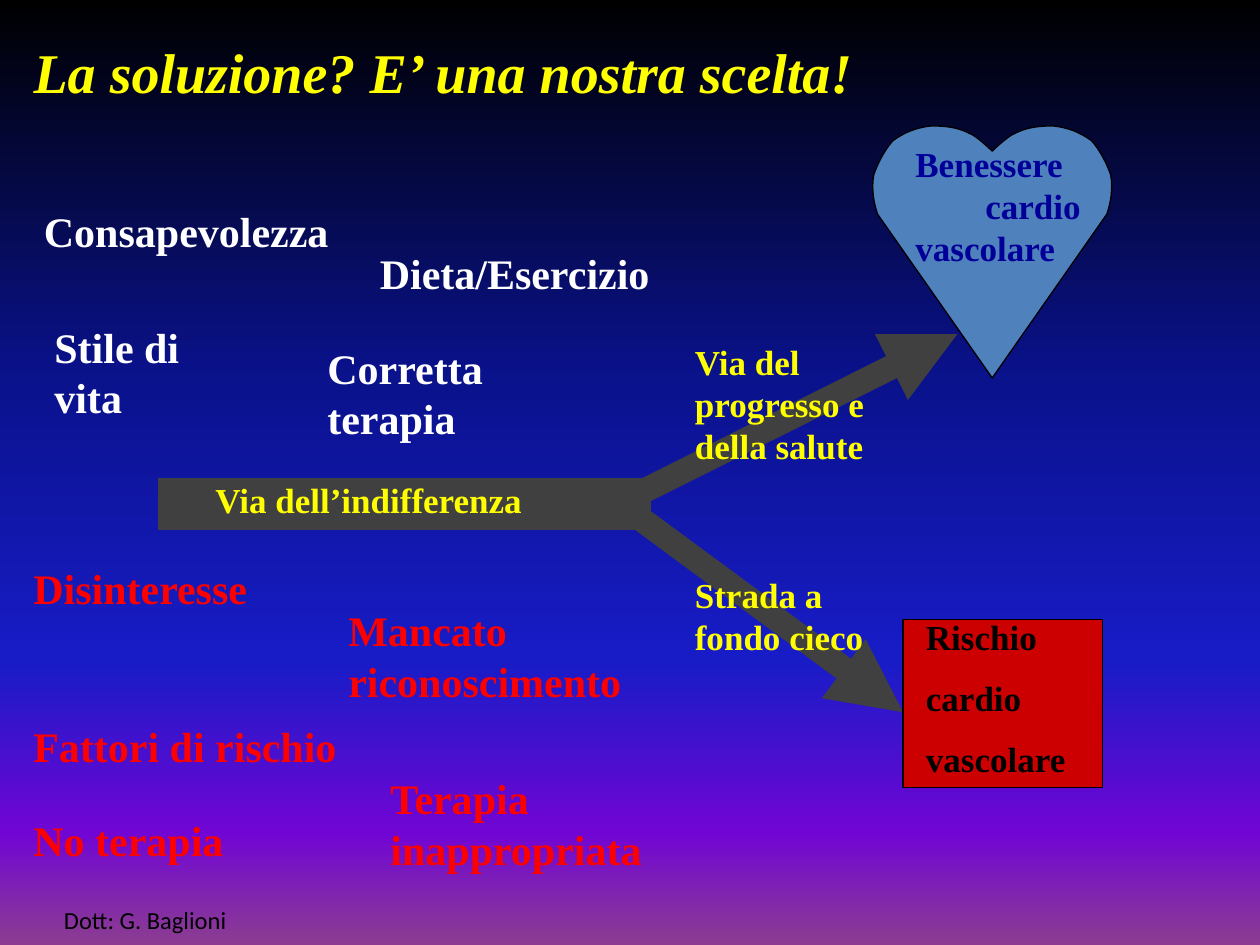
from lxml import etree
from pptx import Presentation
from pptx.dml.color import RGBColor
from pptx.enum.shapes import MSO_CONNECTOR, MSO_SHAPE
from pptx.enum.text import MSO_ANCHOR, MSO_AUTO_SIZE, PP_ALIGN
from pptx.oxml.ns import qn
from pptx.util import Pt

STRAIGHT = MSO_CONNECTOR.STRAIGHT
RECTANGLE = MSO_SHAPE.RECTANGLE
TOP, MIDDLE = MSO_ANCHOR.TOP, MSO_ANCHOR.MIDDLE
LEFT, CENTER = PP_ALIGN.LEFT, PP_ALIGN.CENTER
GROW = MSO_AUTO_SIZE.SHAPE_TO_FIT_TEXT
TITLE_ONLY = 5

SERIF, SANS = "Times New Roman", "Calibri"
YELLOW, WHITE, RED, BLACK = "FFFF00", "FFFFFF", "FF0000", "000000"
ROAD, NAVY, HEART_BLUE, RISK_RED = "404040", "000099", "4F81BD", "CC0000"
NIGHT_SKY = [(0, BLACK), (40, "0A128C"), (70, "181CC7"), (88, "7005D4"), (100, "8C3D91")]

# Left lobe of the heart, from notch to side: offsets from the top centre
LOBE_START = (0, 14.4)
LOBE_CURVES = [
    ((-3, 11.5), (-8.6, 6.5), (-11.5, 5)),
    ((-19.4, 0.7), (-26.6, 0), (-34.6, 0)),
    ((-42.5, 0.7), (-50.4, 3.6), (-56.9, 8.6)),
    ((-61.9, 14.4), (-65.5, 21.6), (-67.7, 28)),
    ((-69.1, 36), (-67.7, 43.9), (-65.5, 50.4)),
]
HEART_TIP = (0, 144)


def color(hex_string):
    return RGBColor.from_string(hex_string)


def curve_points(start, curves, steps=8):
    """Sample a chain of cubic Bezier curves."""
    points = [start]
    for c1, c2, end in curves:
        for step in range(1, steps + 1):
            t = step / steps
            u = 1 - t
            points.append(tuple(
                u**3 * a + 3 * u * u * t * b + 3 * u * t * t * c + t**3 * d
                for a, b, c, d in zip(start, c1, c2, end)))
        start = end
    return points


class SlideBuilder:
    font = SERIF
    outline = 0.75

    def __init__(self, slide):
        self.slide = slide

    def background(self, stops):
        fill = self.slide.background.fill
        fill.gradient()
        fill.gradient_angle = 270
        stop_list = next(self.slide.element.iter(qn("a:gsLst")))
        for old_stop in list(stop_list):
            stop_list.remove(old_stop)
        for percent, hex_string in stops:
            stop = etree.SubElement(stop_list, qn("a:gs"), pos=str(percent * 1000))
            etree.SubElement(stop, qn("a:srgbClr"), val=hex_string)

    def fill_text(self, box, lines, size, hex_string, bold=True, italic=False,
                  font=None, align=LEFT, anchor=TOP, gap=0, indents=()):
        frame = box.text_frame
        frame.word_wrap = True
        frame.auto_size = GROW
        frame.vertical_anchor = anchor
        for number, line in enumerate(lines):
            paragraph = frame.add_paragraph() if number else frame.paragraphs[0]
            paragraph.alignment = align
            paragraph.space_before = Pt(gap if number else 0)
            if number < len(indents):
                properties = paragraph._p.get_or_add_pPr()
                properties.set("marL", str(Pt(indents[number])))
            run = paragraph.add_run()
            run.text = line
            run.font.name = font or self.font
            run.font.size = Pt(size)
            run.font.bold = bold
            run.font.italic = italic
            run.font.color.rgb = color(hex_string)

    def title(self, line, x, y, w, h):
        title = self.slide.shapes.title
        title.left, title.top, title.width, title.height = map(Pt, (x, y, w, h))
        self.fill_text(title, [line], 32, YELLOW, italic=True)

    def text(self, lines, x, y, w, h, size, hex_string, **style):
        box = self.slide.shapes.add_textbox(*map(Pt, (x, y, w, h)))
        self.fill_text(box, lines, size, hex_string, **style)

    def paint(self, shape, fill):
        shape.shadow.inherit = False
        shape.fill.solid()
        shape.fill.fore_color.rgb = color(fill)
        shape.line.color.rgb = color(BLACK)
        shape.line.width = Pt(self.outline)

    def rectangle(self, x, y, w, h, fill):
        self.paint(self.slide.shapes.add_shape(RECTANGLE, *map(Pt, (x, y, w, h))), fill)

    def heart(self, center, top, fill):
        left = curve_points(LOBE_START, LOBE_CURVES)
        right = [(-x, y) for x, y in reversed(left[1:])]
        outline = [(Pt(center + x), Pt(top + y)) for x, y in left + [HEART_TIP] + right]
        builder = self.slide.shapes.build_freeform(*outline[0])
        builder.add_line_segments(outline[1:], close=True)
        self.paint(builder.convert_to_shape(), fill)

    def road(self, start, end, width, arrow=False):
        road = self.slide.shapes.add_connector(STRAIGHT, *map(Pt, start + end))
        road.line.color.rgb = color(ROAD)
        road.line.width = Pt(width)
        properties = road._element.spPr
        if arrow:
            etree.SubElement(properties.find(qn("a:ln")), qn("a:tailEnd"), type="triangle")
        etree.SubElement(properties, qn("a:effectLst"))


def main():
    deck = Presentation()
    deck.slide_width, deck.slide_height = Pt(720), Pt(540)
    page = SlideBuilder(deck.slides.add_slide(deck.slide_layouts[TITLE_ONLY]))
    page.background(NIGHT_SKY)
    page.title("La soluzione? E’ una nostra scelta!", 12, 18, 522, 45)

    page.road((366, 281.5), (547, 191), 14, arrow=True)
    page.heart(567, 72, HEART_BLUE)
    page.road((90, 288), (372, 288), 30)
    page.road((360, 292), (516, 407), 14, arrow=True)
    page.rectangle(516, 354, 114, 96, RISK_RED)

    page.text(["Via dell’indifferenza"], 116, 270, 244, 31, 20, YELLOW)
    page.text(["Via del progresso e della salute"], 390, 191, 150, 80, 20, YELLOW)
    page.text(["Strada a fondo cieco"], 390, 324, 114, 55, 20, YELLOW)
    page.text(["Benessere", "cardio", "vascolare"], 516, 78, 120, 79, 20, NAVY,
              indents=(0, 40))
    page.text(["Rischio", "cardio", "vascolare"], 522, 348, 120, 103, 20, BLACK, gap=11)

    factors = [
        ("Consapevolezza", 18, 114, 180, 36, WHITE),
        ("Dieta/Esercizio", 210, 138, 174, 36, WHITE),
        ("Stile di vita", 24, 180, 126, 65, WHITE),
        ("Corretta terapia", 180, 192, 180, 65, WHITE),
        ("Disinteresse", 12, 318, 174, 36, RED),
        ("Mancato riconoscimento", 192, 342, 180, 65, RED),
        ("Fattori di rischio", 12, 408, 210, 36, RED),
        ("No terapia", 12, 462, 174, 36, RED),
        ("Terapia inappropriata", 216, 438, 204, 65, RED),
    ]
    for factor, x, y, w, h, hex_string in factors:
        page.text([factor], x, y, w, h, 24, hex_string)

    page.text(["Dott: G. Baglioni"], 0, 511, 166, 29, 14, BLACK,
              bold=False, font=SANS, align=CENTER, anchor=MIDDLE)
    deck.save("out.pptx")


if __name__ == "__main__":
    main()
